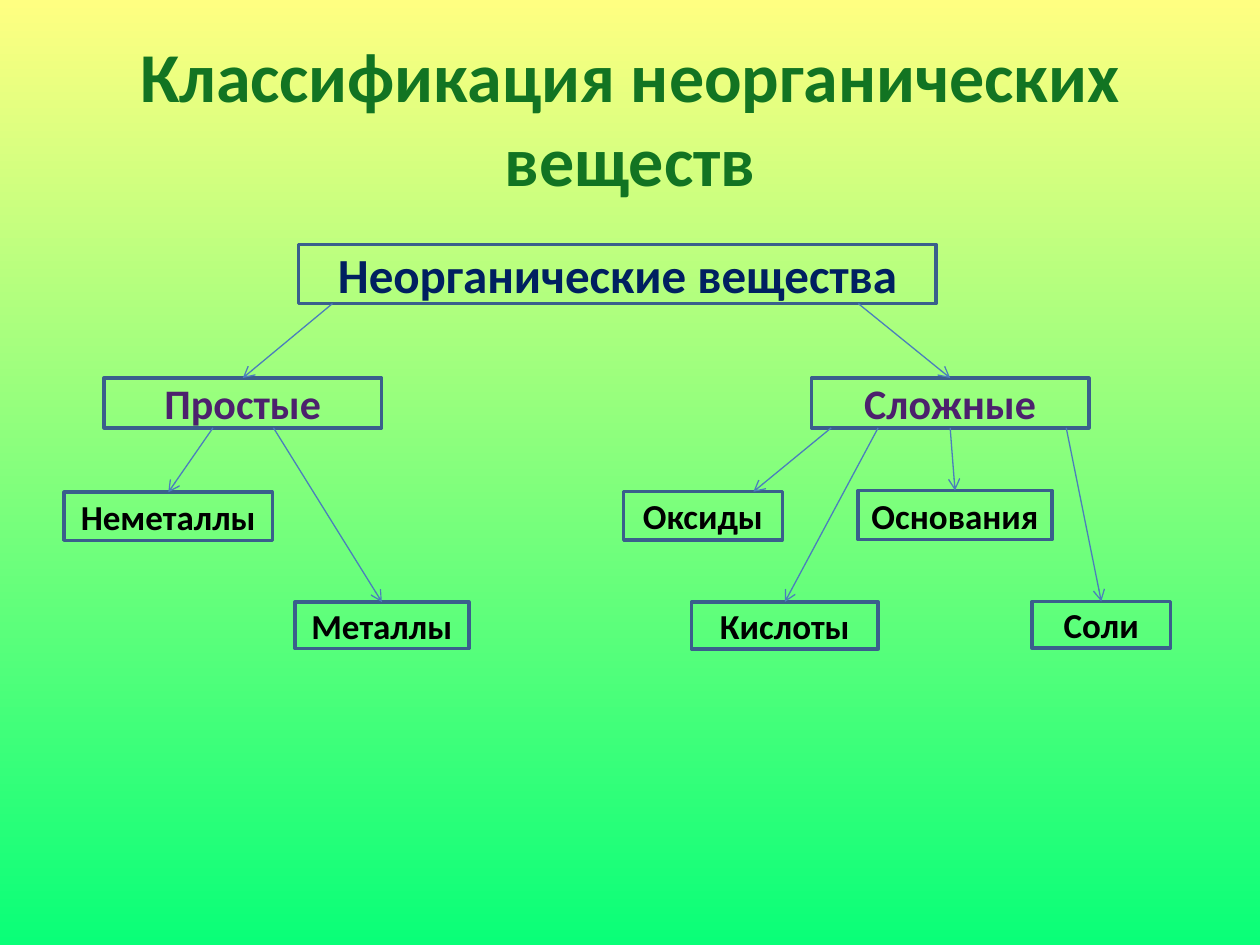
from lxml import etree
from pptx import Presentation
from pptx.dml.color import RGBColor
from pptx.enum.shapes import MSO_CONNECTOR, MSO_SHAPE
from pptx.enum.text import MSO_ANCHOR, PP_ALIGN
from pptx.oxml.ns import qn
from pptx.util import Pt

RECT = MSO_SHAPE.RECTANGLE
STRAIGHT = MSO_CONNECTOR.STRAIGHT
MIDDLE = MSO_ANCHOR.MIDDLE
CENTER = PP_ALIGN.CENTER
TOP, BOTTOM = 0, 2
TITLE_ONLY = 5

FONT = "Calibri"
BOX_LINE, ARROW_LINE = "3A5F8C", "4B7EBC"
ROOT_STYLE = (28, "002060")
GROUP_STYLE = (24, "4C216D")
LEAF_STYLE = (20, "000000")


def color(value):
    return RGBColor.from_string(value)


def write(shape, text, size, font_color):
    tf = shape.text_frame
    tf.vertical_anchor = MIDDLE
    p = tf.paragraphs[0]
    p.text = text
    p.alignment = CENTER
    p.font.name = FONT
    p.font.size = Pt(size)
    p.font.bold = True
    p.font.color.rgb = color(font_color)


def paint_background(s, top, bottom):
    fill = s.background.fill
    fill.gradient()
    fill.gradient_angle = 270
    for stop, value in zip(fill.gradient_stops, (top, bottom)):
        stop.color.rgb = color(value)


def place(shape, box):
    shape.left, shape.top, shape.width, shape.height = (Pt(v) for v in box)


def add_title(s, box, text):
    title = s.shapes.title
    place(title, box)
    write(title, text, 40, "127422")


def add_box(s, box, text, style):
    sp = s.shapes.add_shape(RECT, *(Pt(v) for v in box))
    sp.shadow.inherit = False
    sp.fill.background()
    sp.line.color.rgb = color(BOX_LINE)
    sp.line.width = Pt(2)
    write(sp, text, *style)
    sp.text_frame.word_wrap = False
    return sp


def add_arrow(s, parent, child, start=None, end=None):
    """Without start or end, the arrow joins the middle of that side."""
    bottom = parent.top + parent.height
    c = s.shapes.add_connector(STRAIGHT, Pt(start or 0), bottom, Pt(end or 0), child.top)
    if start is None:
        c.begin_connect(parent, BOTTOM)
    if end is None:
        c.end_connect(child, TOP)
    c.line.color.rgb = color(ARROW_LINE)
    c.line.width = Pt(0.75)
    etree.SubElement(c.line._get_or_add_ln(), qn("a:tailEnd"), type="arrow")
    etree.SubElement(c._element.spPr, qn("a:effectLst"))


def add_group(s, root, start, box, text, leaves):
    group = add_box(s, box, text, GROUP_STYLE)
    add_arrow(s, root, group, start)
    for leaf_text, leaf_box, leaf_start, leaf_end in leaves:
        leaf = add_box(s, leaf_box, leaf_text, LEAF_STYLE)
        add_arrow(s, group, leaf, leaf_start, leaf_end)


def main():
    prs = Presentation()
    prs.slide_width, prs.slide_height = Pt(720), Pt(540)
    s = prs.slides.add_slide(prs.slide_layouts[TITLE_ONLY])
    paint_background(s, "FFFF81", "09FF78")
    add_title(s, (36, 21.6, 648, 90), "Классификация неорганических веществ")

    root = add_box(s, (170.6, 139.7, 364.4, 33.8), "Неорганические вещества", ROOT_STYLE)
    add_group(s, root, 190, (59.5, 216, 158.5, 28.5), "Простые", [
        ("Неметаллы", (36.7, 281.3, 119, 27.5), 121.7, None),
        ("Металлы", (168.5, 344, 99.4, 26.6), 156.3, None),
    ])
    add_group(s, root, 490.5, (463.7, 216, 158.5, 28.5), "Сложные", [
        ("Оксиды", (356.4, 281, 90.7, 27.5), 475, 430.5),
        ("Кислоты", (395.2, 344, 106.6, 26.8), 501.8, None),
        ("Основания", (490.3, 280.3, 110.9, 28), None, None),
        ("Соли", (589.7, 343.7, 79.2, 26.6), 609.3, None),
    ])
    prs.save("out.pptx")


if __name__ == "__main__":
    main()
